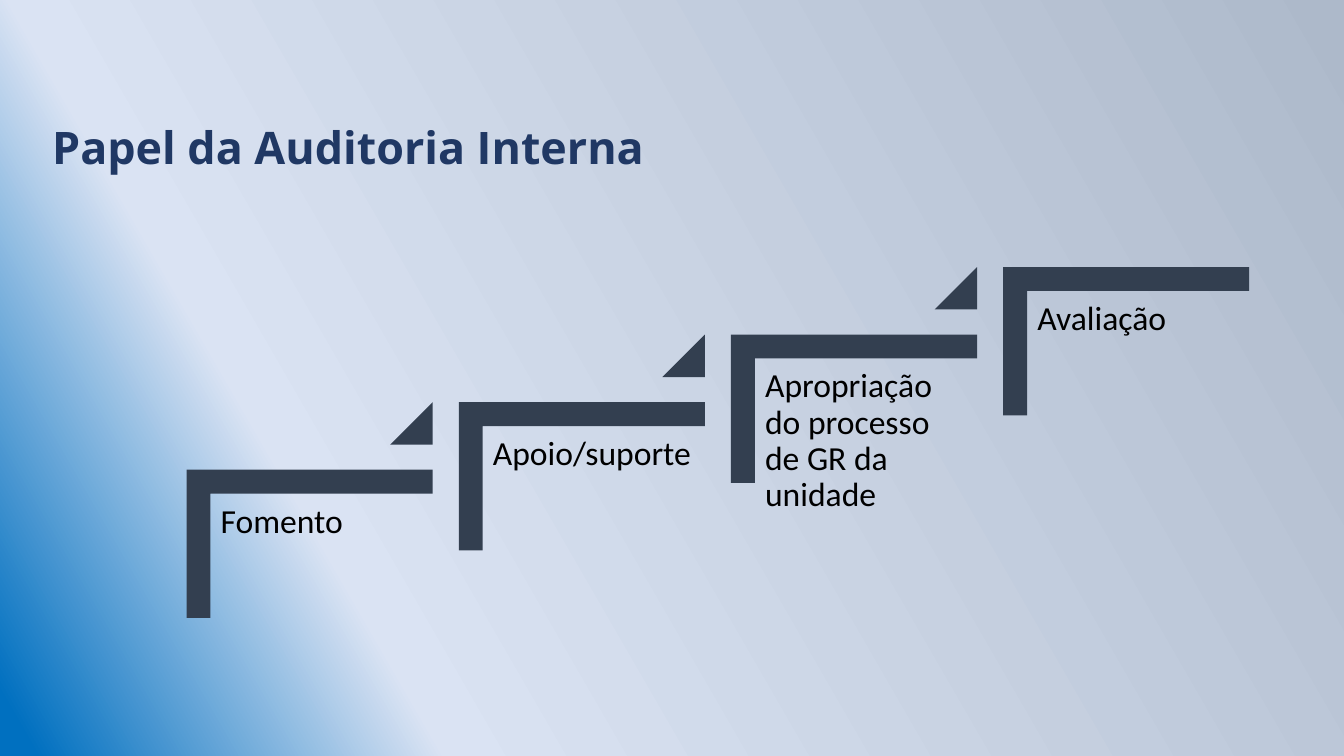
from dataclasses import dataclass

from lxml import etree
from pptx import Presentation
from pptx.dml.color import RGBColor
from pptx.enum.shapes import MSO_SHAPE
from pptx.enum.text import MSO_ANCHOR, MSO_AUTO_SIZE, PP_ALIGN
from pptx.oxml.ns import qn
from pptx.util import Inches, Pt

BLOCK = MSO_SHAPE.RECTANGLE
WEDGE = MSO_SHAPE.ISOSCELES_TRIANGLE
TOP = MSO_ANCHOR.TOP
LEFT = PP_ALIGN.LEFT
GROW = MSO_AUTO_SIZE.SHAPE_TO_FIT_TEXT

WIDTH, HEIGHT = 13.33, 7.5
COL, ROW = 2.7, 0.67            # run and rise of one stair
START_X, START_Y = 1.85, 4.66   # top left of the lowest stair
BAR_W, BAR_H, BAR_ADJ = 2.44, 1.47, 16100
GAP = 0.24                      # bar thickness, where the label begins
LABEL_W, LABEL_H = 2.2, 1.93
WEDGE_SIZE = 0.42

STEPS = ["Fomento", "Apoio/suporte",
         "Apropriação do processo de GR da unidade", "Avaliação"]


@dataclass(frozen=True)
class Theme:
    bar: str = "333F50"
    text: str = "000000"
    title: str = "203864"
    stops: tuple = ((0, "ADB9CA"), (75, "DAE3F3"), (98, "0070C0"))
    angle: int = 210
    font: str = "Calibri"
    head: str = "Open Sans"
    size: int = 24
    large: int = 32


THEME = Theme()


def paint(slide):
    """Fill the background with the three-stop gradient."""
    fill = slide.background.fill
    fill.gradient()
    fill.gradient_angle = THEME.angle
    stops = next(slide.element.iter(qn("a:gsLst")))
    for stop in list(stops):
        stops.remove(stop)
    for share, color in THEME.stops:
        stop = etree.SubElement(stops, qn("a:gs"), pos=str(share * 1000))
        etree.SubElement(stop, qn("a:srgbClr"), val=color)


def add_solid(shapes, kind, x, y, w, h):
    shape = shapes.add_shape(kind, Inches(x), Inches(y), Inches(w), Inches(h))
    shape.shadow.inherit = False
    shape.fill.solid()
    shape.fill.fore_color.rgb = RGBColor.from_string(THEME.bar)
    shape.line.fill.background()
    return shape


def add_bar(shapes, x, y):
    """Add an L, drawn upright and turned a quarter about its centre."""
    shift = (BAR_W - BAR_H) / 2
    bar = add_solid(shapes, BLOCK, x + shift, y - shift, BAR_H, BAR_W)
    bar.rotation = 90
    # The corner preset has no member in MSO_SHAPE.
    geom = next(bar.element.iter(qn("a:prstGeom")))
    geom.set("prst", "corner")
    guides = geom.find(qn("a:avLst"))
    for name in ("adj1", "adj2"):
        etree.SubElement(guides, qn("a:gd"), name=name, fmla=f"val {BAR_ADJ}")


def add_text(shapes, text, x, y, w, h, font, size, color, bold=False):
    box = shapes.add_textbox(Inches(x), Inches(y), Inches(w), Inches(h))
    frame = box.text_frame
    frame.word_wrap = True
    frame.vertical_anchor = TOP
    frame.text = text
    para = frame.paragraphs[0]
    para.alignment = LEFT
    style = para.runs[0].font
    style.name, style.size, style.bold = font, Pt(size), bold
    style.color.rgb = RGBColor.from_string(color)
    return frame


def add_step(shapes, index, text):
    x, y = START_X + index * COL, START_Y - index * ROW
    add_bar(shapes, x, y)
    frame = add_text(shapes, text, x + GAP, y + GAP, LABEL_W, LABEL_H,
                     THEME.font, THEME.size, THEME.text)
    frame.margin_left = frame.margin_right = Inches(0.1)
    frame.margin_top = frame.margin_bottom = Inches(0.1)
    frame.paragraphs[0].line_spacing = 0.9
    if index < len(STEPS) - 1:
        wedge = add_solid(shapes, WEDGE, x + BAR_W - WEDGE_SIZE, y - ROW,
                          WEDGE_SIZE, WEDGE_SIZE)
        wedge.adjustments[0] = 1


def main():
    deck = Presentation()
    deck.slide_width, deck.slide_height = Inches(WIDTH), Inches(HEIGHT)
    slide = deck.slides.add_slide(deck.slide_layouts[6])
    paint(slide)
    stairs = slide.shapes.add_group_shape()
    for index, text in enumerate(STEPS):
        add_step(stairs.shapes, index, text)
    title = add_text(slide.shapes, "Papel da Auditoria Interna",
                     0.42, 1.14, 12.34, 0.64,
                     THEME.head, THEME.large, THEME.title, True)
    title.auto_size = GROW
    deck.save("out.pptx")


if __name__ == "__main__":
    main()
